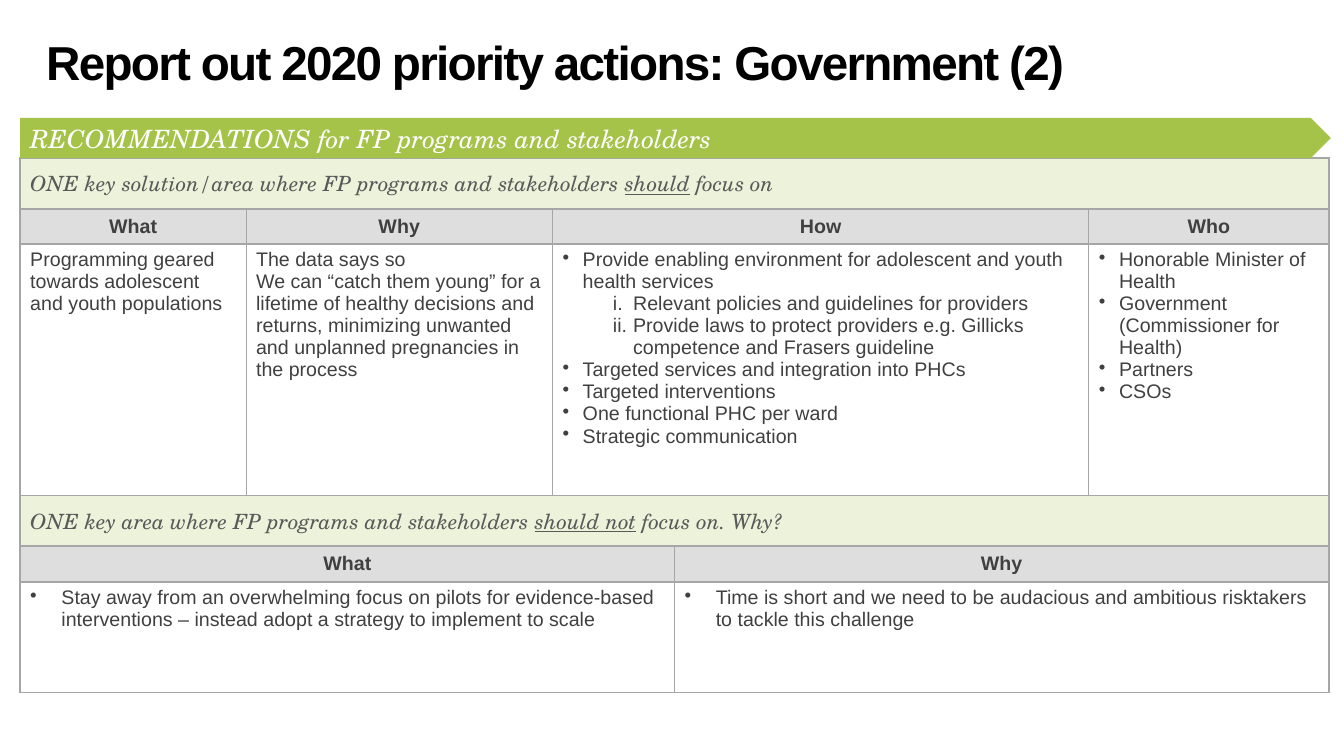
from pptx import Presentation
from pptx.dml.color import RGBColor
from pptx.enum import shapes, text
from pptx.oxml import parse_xml
from pptx.oxml.ns import nsdecls
from pptx.util import Inches, Pt

TITLE = "Report out 2020 priority actions: Government (2)"
BANNER = "RECOMMENDATIONS for FP programs and stakeholders"

# Paragraph kinds: left margin, hanging indent, bullet element
PLAIN = None
BULLET = (0.2, -0.2, '<a:buChar {} char="•"/>')
WIDE_BULLET = (0.31, -0.31, '<a:buChar {} char="•"/>')
ROMAN = (0.7, -0.2, '<a:buAutoNum {} type="romanLcPeriod"/>')

# Each row: style, then (column span, paragraphs); a paragraph is (kind, runs)
ROWS = [
    ("band", [(5, [(PLAIN, ["ONE key solution/area where FP programs and stakeholders ",
                            "should", " focus on"])])]),
    ("head", [(1, [(PLAIN, ["What"])]), (1, [(PLAIN, ["Why"])]),
              (2, [(PLAIN, ["How"])]), (1, [(PLAIN, ["Who"])])]),
    ("body", [
        (1, [(PLAIN, ["Programming geared towards adolescent and youth populations"])]),
        (1, [(PLAIN, ["The data says so"]),
             (PLAIN, ["We can “catch them young” for a lifetime of healthy decisions and "
                      "returns, minimizing unwanted and unplanned pregnancies in the process"])]),
        (2, [(BULLET, ["Provide enabling environment for adolescent and youth health services"]),
             (ROMAN, ["Relevant policies and guidelines for providers"]),
             (ROMAN, ["Provide laws to protect providers e.g. Gillicks competence "
                      "and Frasers guideline"]),
             (BULLET, ["Targeted services and integration into PHCs"]),
             (BULLET, ["Targeted interventions"]),
             (BULLET, ["One functional PHC per ward"]),
             (BULLET, ["Strategic communication"])]),
        (1, [(BULLET, ["Honorable Minister of Health"]),
             (BULLET, ["Government (Commissioner for Health)"]),
             (BULLET, ["Partners"]),
             (BULLET, ["CSOs"])]),
    ]),
    ("band", [(5, [(PLAIN, ["ONE key area where FP programs and stakeholders ",
                            "should not", " focus on. Why?"])])]),
    ("head", [(3, [(PLAIN, ["What"])]), (2, [(PLAIN, ["Why"])])]),
    ("body", [
        (3, [(WIDE_BULLET, ["Stay away from an overwhelming focus on pilots for evidence-based "
                            "interventions – instead adopt a strategy to implement to scale"])]),
        (2, [(WIDE_BULLET, ["Time is short and we need to be audacious and ambitious "
                            "risktakers to tackle this challenge"])]),
    ]),
]
COLUMN_WIDTHS = [2.24, 3.04, 1.21, 4.11, 2.38]
ROW_HEIGHTS = [0.5, 0.35, 2.5, 0.5, 0.35, 1.1]
THICK, THIN = 1.5, 0.75
RULE_WIDTHS = [THICK, THICK, THICK, THIN, THICK, THICK, THICK]

BORDER, GREEN = "A6A6A6", "A5C249"
FILLS = {"band": "EDF3DB", "head": "DEDEDE", "body": "FFFFFF"}
FONTS = {
    "title": dict(name="Arial", size=Pt(34), bold=True, color="000000"),
    "banner": dict(name="TeX Gyre Schola", size=Pt(18), italic=True, color="FFFFFF"),
    "band": dict(name="TeX Gyre Schola", size=Pt(15), italic=True, color="595959"),
    "head": dict(name="Arial", size=Pt(14), bold=True, color="404040"),
    "body": dict(name="Arial", size=Pt(14), bold=False, color="404040"),
}


def paint(target, color):
    target.solid()
    target.fore_color.rgb = RGBColor.from_string(color)


def add_run(paragraph, words, style):
    run = paragraph.add_run()
    run.text = words
    for key, value in FONTS[style].items():
        if key == "color":
            paint(run.font.fill, value)
        else:
            setattr(run.font, key, value)
    return run


def write_cell(cell, style, paragraphs):
    frame = cell.text_frame
    cell.vertical_anchor = text.MSO_ANCHOR.TOP if style == "body" else text.MSO_ANCHOR.MIDDLE
    for index, (kind, runs) in enumerate(paragraphs):
        paragraph = frame.add_paragraph() if index else frame.paragraphs[0]
        paragraph.alignment = text.PP_ALIGN.CENTER if style == "head" else text.PP_ALIGN.LEFT
        if kind:
            margin, indent, bullet = kind
            properties = paragraph._p.get_or_add_pPr()
            properties.set("marL", str(Inches(margin)))
            properties.set("indent", str(Inches(indent)))
            properties.append(parse_xml(bullet.format(nsdecls("a"))))
            paragraph.level = int(kind is ROMAN)
        for position, words in enumerate(runs):
            run = add_run(paragraph, words, style)
            if position == 1:
                run.font.underline = True


def set_borders(cell, widths):
    """Draw the left, right, top and bottom borders, in that order."""
    properties = cell._tc.get_or_add_tcPr()
    for index, (side, width) in enumerate(zip("LRTB", widths)):
        properties.insert(index, parse_xml(
            f'<a:ln{side} {nsdecls("a")} w="{Pt(width)}"><a:solidFill>'
            f'<a:srgbClr val="{BORDER}"/></a:solidFill></a:ln{side}>'))


def add_title(slide):
    box = slide.shapes.add_textbox(Inches(0.36), Inches(0.32), Inches(12.58), Inches(0.65))
    frame = box.text_frame
    frame.word_wrap = True
    frame.vertical_anchor = text.MSO_ANCHOR.MIDDLE
    frame.paragraphs[0].line_spacing = 0.9
    run = add_run(frame.paragraphs[0], TITLE, "title")
    run._r.get_or_add_rPr().set("spc", "-120")


def add_recommendations(slide):
    table = slide.shapes.add_table(
        len(ROWS), len(COLUMN_WIDTHS), Inches(0.2), Inches(1.57),
        Inches(sum(COLUMN_WIDTHS)), Inches(sum(ROW_HEIGHTS))).table
    table.first_row = table.horz_banding = False
    for column, width in zip(table.columns, COLUMN_WIDTHS):
        column.width = Inches(width)
    for row, height in zip(table.rows, ROW_HEIGHTS):
        row.height = Inches(height)

    for r, (style, entries) in enumerate(ROWS):
        start = 0
        for span, paragraphs in entries:
            end = start + span
            widths = (THIN if start else THICK,
                      THIN if end < len(COLUMN_WIDTHS) else THICK,
                      RULE_WIDTHS[r], RULE_WIDTHS[r + 1])
            for c in range(start, end):
                paint(table.cell(r, c).fill, FILLS[style])
                set_borders(table.cell(r, c), widths)
            if span > 1:
                table.cell(r, start).merge(table.cell(r, end - 1))
            write_cell(table.cell(r, start), style, paragraphs)
            start = end


def add_banner(slide):
    banner = slide.shapes.add_shape(
        shapes.MSO_SHAPE.PENTAGON, Inches(0.2), Inches(1.17), Inches(13), Inches(0.4))
    banner.shadow.inherit = False
    paint(banner.fill, GREEN)
    banner.line.fill.background()
    frame = banner.text_frame
    frame.word_wrap = True
    frame.vertical_anchor = text.MSO_ANCHOR.MIDDLE
    frame.paragraphs[0].alignment = text.PP_ALIGN.LEFT
    add_run(frame.paragraphs[0], BANNER, "banner")


def main():
    deck = Presentation()
    deck.slide_width, deck.slide_height = Inches(13.33), Inches(7.5)
    slide = deck.slides.add_slide(deck.slide_layouts[6])
    add_title(slide)
    add_recommendations(slide)
    add_banner(slide)
    deck.save("out.pptx")


if __name__ == "__main__":
    main()
